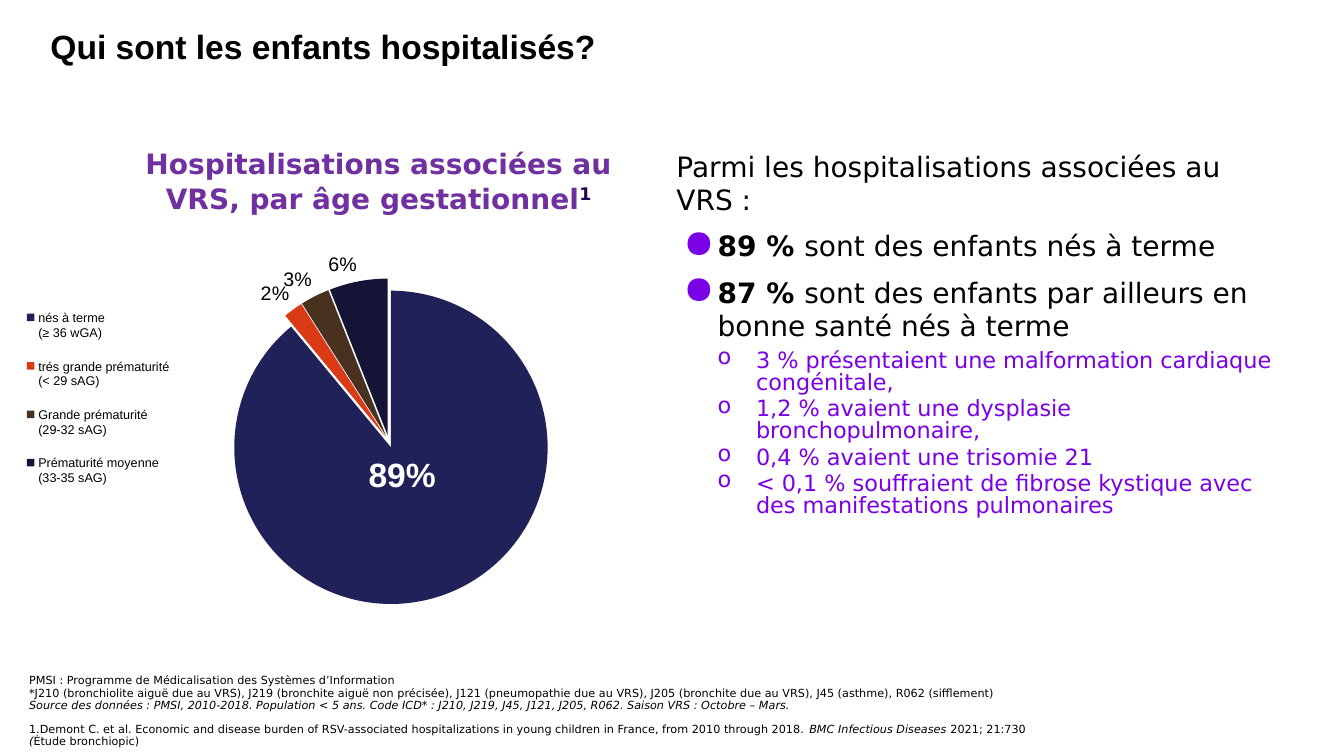
import pptx
import pptx.chart.data
import pptx.dml.color
import pptx.enum.chart
import pptx.enum.text
import pptx.oxml
import pptx.oxml.ns
import pptx.util
from dataclasses import dataclass
from pptx.util import Inches, Pt


@dataclass(frozen=True)
class Theme:
    heading_font: str = "Arial"
    body_font: str = "DejaVu Sans"
    black: str = "000000"
    white: str = "FFFFFF"
    violet: str = "7A00E6"
    purple: str = "7030A0"
    deep_purple: str = "23004C"
    title_size: float = 24
    body_size: float = 20
    detail_size: float = 16
    note_size: float = 8
    legend_size: float = 9
    label_size: float = 14
    reference_size: float = 21.3


THEME = Theme()

TITLE = "Qui sont les enfants hospitalisés?"
CHART_TITLE = "Hospitalisations associées au VRS, par âge gestationnel"
INTRODUCTION = "Parmi les hospitalisations associées au VRS :"
KEY_FIGURES = [
    ("89\u00a0% ", "sont des enfants nés à terme"),
    ("87\u00a0% ", "sont des enfants par ailleurs en bonne santé nés à terme"),
]
DETAILS = [
    "3\u00a0% présentaient une malformation cardiaque congénitale,",
    "1,2\u00a0% avaient une dysplasie bronchopulmonaire,",
    "0,4\u00a0% avaient une trisomie 21",
    "< 0,1\u00a0% souffraient de fibrose kystique avec des manifestations pulmonaires",
]
# Each note is a list of (text, italic) pieces.
NOTES = [
    [("PMSI\u00a0: Programme de Médicalisation des Systèmes d’Information", False)],
    [("*J210 (bronchiolite aiguë due au VRS), J219 (bronchite aiguë non précisée), "
      "J121 (pneumopathie due au VRS), J205 (bronchite due au VRS), J45 (asthme), "
      "R062 (sifflement)", False)],
    [("Source des données\u00a0: PMSI, 2010-2018. Population < 5\u00a0ans. Code ICD*\u00a0: "
      "J210, J219, J45, J121, J205, R062. Saison VRS\u00a0: Octobre – Mars.", True)],
    [("1.Demont C. et al. Economic and disease burden of RSV-associated hospitalizations "
      "in young children in France, from 2010 through 2018. ", False),
     ("BMC Infectious Diseases ", True), ("2021; 21:730 ", False),
     ("(", True), ("Étude bronchiopic)", False)],
]
# Category, share, slice colour
GESTATIONAL_AGES = [
    ("nés à terme\n(≥ 36 wGA)", 0.89, "21215A"),
    ("trés grande prématurité\n(< 29 sAG)", 0.02, "DA3A16"),
    ("Grande prématurité\n(29-32 sAG)", 0.03, "49311F"),
    ("Prématurité moyenne\n(33-35 sAG)", 0.06, "141436"),
]


def rgb(color):
    return pptx.dml.color.RGBColor.from_string(color)


def style_font(font, size, color=THEME.black, name=THEME.body_font, bold=False, italic=False):
    font.size, font.name, font.bold, font.italic = Pt(size), name, bold, italic
    font.color.rgb = rgb(color)


def add_run(paragraph, text, size, baseline=None, **font_format):
    run = paragraph.add_run()
    run.text = text
    style_font(run.font, size, **font_format)
    if baseline:
        run.font._element.set("baseline", str(baseline * 1000))


def add_text_frame(slide, left, top, width, height):
    box = slide.shapes.add_textbox(Inches(left), Inches(top), Inches(width), Inches(height))
    box.text_frame.word_wrap = True
    return box.text_frame


def next_paragraph(frame):
    """Return the empty first paragraph, or a new one after existing text."""
    first = frame.paragraphs[0]
    return frame.add_paragraph() if first.runs else first


def add_bullet(paragraph, character, indent, hanging, percent=100):
    properties = paragraph._p.get_or_add_pPr()
    properties.set("marL", str(Inches(indent)))
    properties.set("indent", str(-Inches(hanging)))
    namespace = pptx.oxml.ns.nsdecls("a")
    for xml in (
        f'<a:buClr {namespace}><a:srgbClr val="{THEME.violet}"/></a:buClr>',
        f'<a:buSzPct {namespace} val="{percent * 1000}"/>',
        f'<a:buChar {namespace} char="{character}"/>',
    ):
        properties.append(pptx.oxml.parse_xml(xml))


def manual_layout(x, y, width=None, height=None, inner=False):
    """Build a chart layout element in fractions of the chart; without a size it is an offset."""
    parts = ['<c:layoutTarget val="inner"/>'] if inner else []
    if width:
        parts += ['<c:xMode val="edge"/>', '<c:yMode val="edge"/>']
    sizes = [("x", x), ("y", y), ("w", width), ("h", height)]
    parts += [f'<c:{tag} val="{value}"/>' for tag, value in sizes if value is not None]
    return pptx.oxml.parse_xml(
        f'<c:layout {pptx.oxml.ns.nsdecls("c")}><c:manualLayout>'
        f'{"".join(parts)}</c:manualLayout></c:layout>')


def set_layout(element, layout, after=None):
    """Replace an element's layout, placing the new one after the named child or first."""
    for old in element.findall(pptx.oxml.ns.qn("c:layout")):
        element.remove(old)
    if after is None:
        element.insert(0, layout)
    else:
        element.find(pptx.oxml.ns.qn(after)).addnext(layout)


def add_title(slide):
    title = slide.shapes.title
    title.left, title.top, title.width, title.height = map(Inches, (0.38, 0.07, 6.08, 0.82))
    frame = title.text_frame
    frame.vertical_anchor = pptx.enum.text.MSO_ANCHOR.MIDDLE
    frame.margin_left = Inches(0.12)
    paragraph = frame.paragraphs[0]
    paragraph.alignment = pptx.enum.text.PP_ALIGN.LEFT
    paragraph.line_spacing = 0.9
    add_run(paragraph, TITLE, THEME.title_size, name=THEME.heading_font, bold=True)


def add_notes_block(slide):
    frame = add_text_frame(slide, 0.19, 6.63, 10.32, 0.85)
    for index, pieces in enumerate(NOTES):
        paragraph = next_paragraph(frame)
        if index >= 2:
            paragraph.line_spacing = 0.9
        if index == len(NOTES) - 1:
            paragraph.space_before = Pt(8.4)
        for text, italic in pieces:
            add_run(paragraph, text, THEME.note_size, italic=italic)


def add_findings(slide):
    frame = add_text_frame(slide, 6.61, 1.43, 6.11, 4.18)
    add_run(next_paragraph(frame), INTRODUCTION, THEME.body_size)
    for figure, statement in KEY_FIGURES:
        paragraph = next_paragraph(frame)
        paragraph.space_before = Pt(9)
        add_bullet(paragraph, "●", 0.41, 0.34, percent=140)
        add_run(paragraph, figure, THEME.body_size, bold=True)
        add_run(paragraph, statement, THEME.body_size)
    for index, detail in enumerate(DETAILS):
        paragraph = next_paragraph(frame)
        paragraph.space_before = Pt(3 if index else 6)
        paragraph.line_spacing = Pt(15.8)
        add_bullet(paragraph, "o", 0.79, 0.38)
        add_run(paragraph, detail, THEME.detail_size, color=THEME.violet)


def add_chart_title(slide):
    paragraph = add_text_frame(slide, 1.14, 1.4, 5.23, 1.11).paragraphs[0]
    paragraph.alignment = pptx.enum.text.PP_ALIGN.CENTER
    add_run(paragraph, CHART_TITLE, THEME.body_size, color=THEME.purple, bold=True)
    add_run(paragraph, "1", THEME.reference_size, baseline=30, color=THEME.deep_purple, bold=True)


def add_pie(slide):
    names, shares, colors = zip(*GESTATIONAL_AGES)
    data = pptx.chart.data.CategoryChartData(number_format="0%")
    data.categories = names
    data.add_series("Series 1", shares)
    chart = slide.shapes.add_chart(
        pptx.enum.chart.XL_CHART_TYPE.PIE_EXPLODED,
        Inches(0.1), Inches(2.36), Inches(7.59), Inches(4.49), data).chart
    style_font(chart.font, 10, name=THEME.heading_font)
    chart.has_title = False
    chart.has_legend = True
    chart.legend.position = pptx.enum.chart.XL_LEGEND_POSITION.BOTTOM
    chart.legend.include_in_layout = False
    style_font(chart.legend.font, THEME.legend_size, name=THEME.heading_font)
    set_layout(chart.legend._element, manual_layout(0, 0.12, 0.23, 0.47), "c:legendPos")

    plot = chart.plots[0]
    plot.vary_by_categories = True
    set_layout(chart._chartSpace.chart.plotArea, manual_layout(0.26, 0.09, 0.47, 0.72, inner=True))
    series = plot.series[0]
    series._element.find(pptx.oxml.ns.qn("c:explosion")).set("val", "4")
    for index, color in enumerate(colors):
        fill = series.points[index].format.fill
        fill.solid()
        fill.fore_color.rgb = rgb(color)

    labels = series.data_labels
    labels.show_value = True
    labels.number_format, labels.number_format_is_linked = "0%", False
    labels.position = pptx.enum.chart.XL_LABEL_POSITION.OUTSIDE_END
    style_font(labels.font, THEME.label_size, name=THEME.heading_font)
    main_label = series.points[0].data_label
    style_font(main_label.font, THEME.title_size, THEME.white, THEME.heading_font, bold=True)
    main_label.position = pptx.enum.chart.XL_LABEL_POSITION.CENTER
    set_layout(labels._element.find(pptx.oxml.ns.qn("c:dLbl")), manual_layout(-0.02, -0.1), "c:idx")


def main():
    presentation = pptx.Presentation()
    presentation.slide_width, presentation.slide_height = Inches(13.33), Inches(7.5)
    slide = presentation.slides.add_slide(presentation.slide_layouts[5])
    add_title(slide)
    add_notes_block(slide)
    add_findings(slide)
    add_chart_title(slide)
    add_pie(slide)
    presentation.save("out.pptx")


if __name__ == "__main__":
    main()
